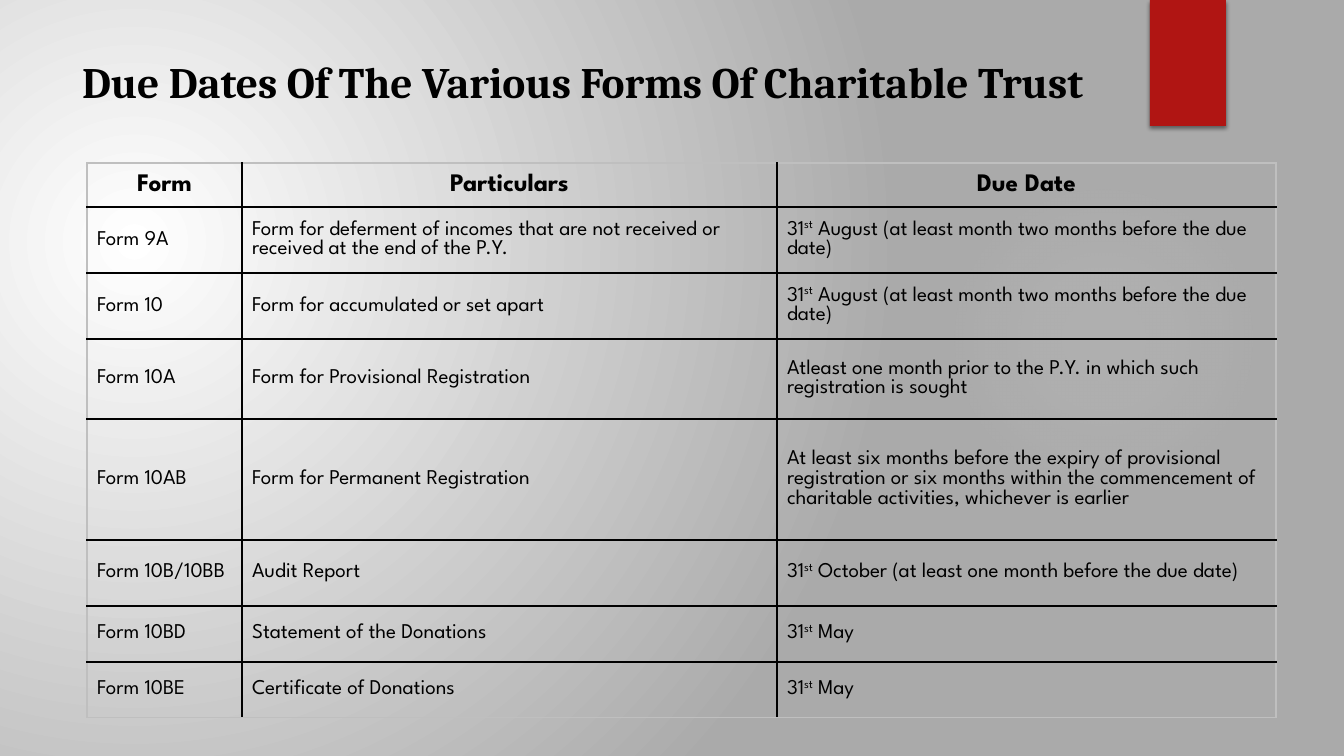
from lxml import etree
from pptx import Presentation
from pptx.dml.color import RGBColor
from pptx.enum.shapes import MSO_SHAPE as Shape
from pptx.enum.text import MSO_ANCHOR as Anchor, MSO_AUTO_SIZE as AutoSize, PP_ALIGN as Align
from pptx.oxml import parse_xml
from pptx.oxml.ns import nsdecls, qn
from pptx.util import Pt

PX = 914400 / 100.8
BLACK = RGBColor(0x00, 0x00, 0x00)
RED = RGBColor(0xB0, 0x15, 0x13)
WHITE = RGBColor(0xFF, 0xFF, 0xFF)
GREY = RGBColor(0xAA, 0xAA, 0xAA)
PALE = RGBColor(0xF3, 0xF3, 0xF3)
EDGE = RGBColor(0xBF, 0xBF, 0xBF)


def write(frame, text, font="League Spartan", size=15, bold=False, align=Align.LEFT):
    """Fill the first paragraph; parts between bars are superscript."""
    para = frame.paragraphs[0]
    para.alignment = align
    for index, part in enumerate(text.split("|")):
        span = para.add_run()
        span.text = part
        span.font.name, span.font.size, span.font.bold = font, Pt(size), bold
        span.font.color.rgb = BLACK
        if index % 2:
            span.font._element.set("baseline", "30000")


def radial(owner, stops, center):
    """Turn the owner's gradient fill into a circular one."""
    gradient = next(owner.iter(qn("a:gradFill")))
    gradient.clear()
    stop_list = etree.SubElement(gradient, qn("a:gsLst"))
    for position, color, alpha in stops:
        stop = etree.SubElement(stop_list, qn("a:gs"), pos=str(position * 1000))
        tint = etree.SubElement(stop, qn("a:srgbClr"), val=str(color))
        if alpha < 100:
            etree.SubElement(tint, qn("a:alpha"), val=str(alpha * 1000))
    shade = etree.SubElement(gradient, qn("a:path"), path="circle")
    sides = {side: str(value * 1000) for side, value in zip("ltrb", center)}
    etree.SubElement(shade, qn("a:fillToRect"), **sides)


deck = Presentation()
deck.slide_width, deck.slide_height = round(1344 * PX), round(756 * PX)
page = deck.slides.add_slide(deck.slide_layouts[5])

# Background
page.background.fill.gradient()
radial(page.element, [(0, WHITE, 100), (100, GREY, 100)], (45, 65, 125, 100))

# Soft glow and red ribbon
glow = page.shapes.add_shape(Shape.OVAL, *(round(v * PX) for v in (949, 184, 310, 310)))
glow.shadow.inherit = False
glow.line.fill.background()
glow.fill.gradient()
radial(glow.element, [(0, PALE, 7), (36, PALE, 6), (69, PALE, 0)], (50, 50, 50, 50))

ribbon = page.shapes.add_shape(Shape.RECTANGLE, *(round(v * PX) for v in (1150, 0, 76, 126)))
ribbon.shadow.inherit = False
ribbon.fill.solid()
ribbon.fill.fore_color.rgb = RED
ribbon.line.fill.background()
ribbon.element.spPr.find(qn("a:effectLst")).append(parse_xml(
    f'<a:outerShdw {nsdecls("a")} blurRad="38100" dist="25400" dir="5400000" rotWithShape="0">'
    '<a:srgbClr val="000000"><a:alpha val="45000"/></a:srgbClr></a:outerShdw>'))

# Title
title = page.shapes.title
title.left, title.top, title.width, title.height = (round(v * PX) for v in (72, 50, 1037, 154))
title.text_frame.word_wrap = True
title.text_frame.auto_size = AutoSize.NONE
title.text_frame.vertical_anchor = Anchor.TOP
write(title.text_frame, "Due Dates Of The Various Forms Of Charitable Trust",
      font="Cambria", size=31, bold=True)

# Table of forms
AUGUST = "31|st| August (at least month two months before the due date)"
ROWS = [
    (44, "Form", "Particulars", "Due Date"),
    (66, "Form 9A", "Form for deferment of incomes that are not received or "
     "received at the end of the P.Y.", AUGUST),
    (66, "Form 10", "Form for accumulated or set apart", AUGUST),
    (80, "Form 10A", "Form for Provisional Registration",
     "Atleast one month prior to the P.Y. in which such registration is sought"),
    (121, "Form 10AB", "Form for Permanent Registration",
     "At least six months before the expiry of provisional registration or six months "
     "within the commencement of charitable activities, whichever is earlier"),
    (66, "Form 10B/10BB", "Audit Report",
     "31|st| October (at least one month before the due date)"),
    (56, "Form 10BD", "Statement of the Donations", "31|st| May"),
    (56, "Form 10BE", "Certificate of Donations", "31|st| May"),
]
WIDTHS = (155, 535, 499)
frame = page.shapes.add_table(len(ROWS), len(WIDTHS),
                              *(round(v * PX) for v in (87, 163, sum(WIDTHS), 555)))
table = frame.table
table.first_row = table.horz_banding = False
for column, width in zip(table.columns, WIDTHS):
    column.width = round(width * PX)

for r, (height, *texts) in enumerate(ROWS):
    table.rows[r].height = round(height * PX)
    for c, text in enumerate(texts):
        cell = table.cell(r, c)
        cell.vertical_anchor = Anchor.MIDDLE
        header = r == 0
        write(cell.text_frame, text, size=18 if header else 15, bold=header,
              align=Align.CENTER if header else Align.LEFT)
        # Pale outer edge, black inner lines
        outer = {"L": c == 0, "R": c == len(WIDTHS) - 1, "T": r == 0, "B": r == len(ROWS) - 1}
        for side, on_edge in outer.items():
            cell._tc.get_or_add_tcPr().append(parse_xml(
                f'<a:ln{side} {nsdecls("a")} w="12700"><a:solidFill>'
                f'<a:srgbClr val="{EDGE if on_edge else BLACK}"/></a:solidFill></a:ln{side}>'))
        cell.fill.background()

deck.save("out.pptx")
